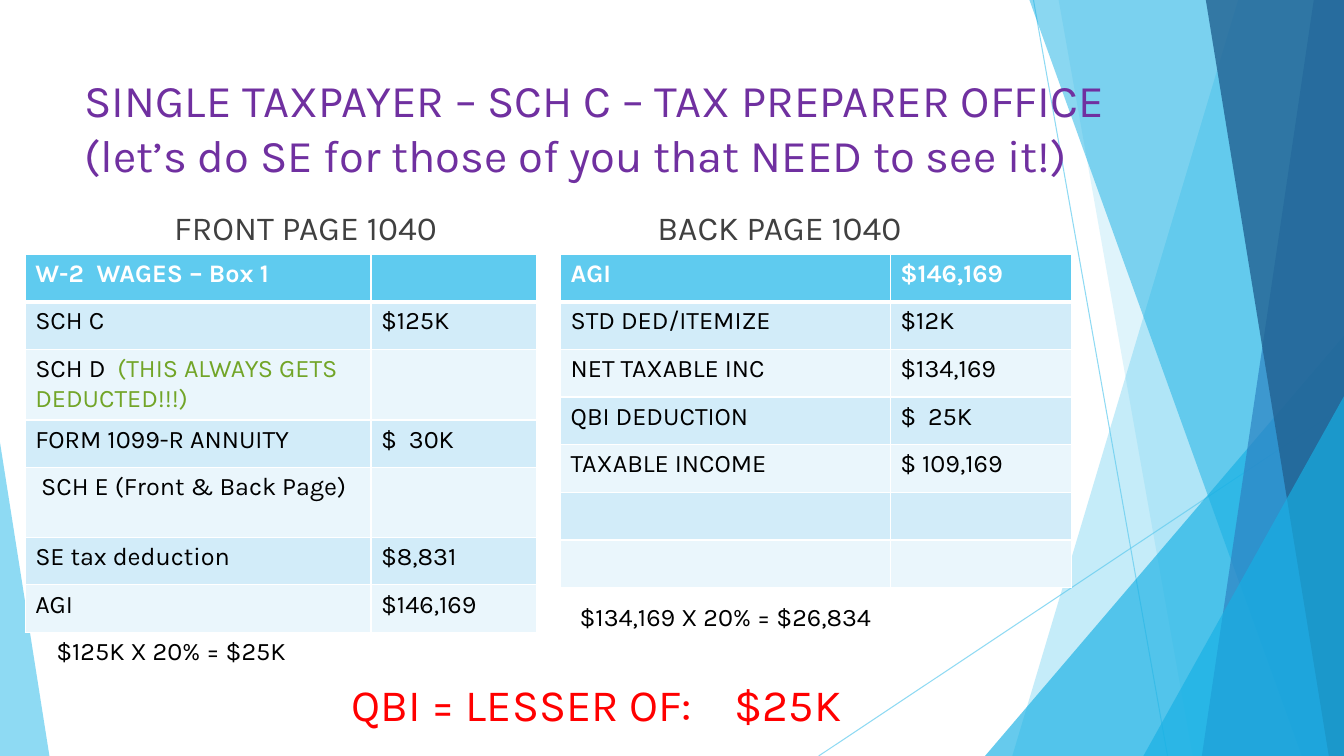
from dataclasses import dataclass

from lxml.etree import SubElement
from pptx import Presentation
from pptx.dml.color import RGBColor
from pptx.enum.shapes import MSO_CONNECTOR, MSO_SHAPE
from pptx.enum.text import MSO_ANCHOR, PP_ALIGN
from pptx.oxml.ns import qn
from pptx.util import Inches, Pt


@dataclass(frozen=True)
class Theme:
    font: str = "Karla"
    sky: str = "5FCBEF"
    azure: str = "17B0E4"
    blue: str = "2E83C3"
    navy: str = "226292"
    band_dark: str = "D2ECF9"
    band_light: str = "EAF6FC"
    white: str = "FFFFFF"
    black: str = "000000"
    purple: str = "7030A0"
    gray: str = "404040"
    green: str = "72A528"
    red: str = "FF0000"
    title_size: float = 32.4
    result_size: float = 32
    heading_size: float = 24
    body_size: float = 18


THEME = Theme()
WIDTH, HEIGHT = 13.33, 7.5
ROW = 0.473
TALL_ROW = 0.69

FRONT_ROWS = [
    ("W-2  WAGES – Box 1", ""),
    ("SCH C", "$125K"),
    (("SCH D  ", "(THIS ALWAYS GETS DEDUCTED!!!)"), ""),
    ("FORM 1099-R ANNUITY", "$  30K"),
    (" SCH E (Front & Back Page)", ""),
    ("SE tax deduction", "$8,831"),
    ("AGI", "$146,169"),
]
BACK_ROWS = [
    ("AGI", "$146,169"),
    ("STD DED/ITEMIZE", "$12K"),
    ("NET TAXABLE INC", "$134,169"),
    ("QBI DEDUCTION", "$  25K"),
    ("TAXABLE INCOME", "$ 109,169"),
    ("", ""),
    ("", ""),
]


def rgb(color):
    return RGBColor.from_string(color)


def add_run(paragraph, text, *, size=THEME.body_size, color=THEME.black, bold=False):
    run = paragraph.add_run()
    run.text = text
    run.font.name = THEME.font
    run.font.size = Pt(size)
    run.font.bold = bold
    run.font.color.rgb = rgb(color)


def add_text(slide, box, text, *, align=PP_ALIGN.LEFT, anchor=MSO_ANCHOR.TOP, **format):
    """Place text in a box; each line of the text is kept on its own line."""
    frame = slide.shapes.add_textbox(*map(Inches, box)).text_frame
    frame.word_wrap = True
    frame.vertical_anchor = anchor
    paragraph = frame.paragraphs[0]
    paragraph.alignment = align
    for index, line in enumerate(text.split("\n")):
        if index:
            paragraph.add_line_break()
        add_run(paragraph, line, **format)


def set_alpha(parent, percent):
    color = next(parent.iter(qn("a:srgbClr")))
    SubElement(color, qn("a:alpha"), val=str(percent * 1000))


def paint(shape, color, alpha):
    shape.shadow.inherit = False
    shape.line.fill.background()
    shape.fill.solid()
    shape.fill.fore_color.rgb = rgb(color)
    set_alpha(shape._element.spPr, alpha)


# Decoration: thin lines and translucent facets
def add_decoration(slide):
    for ends in [(10.25, 0, 11.58, HEIGHT), (WIDTH, 4.03, 8.12, HEIGHT)]:
        line = slide.shapes.add_connector(MSO_CONNECTOR.STRAIGHT, *map(Inches, ends))
        line.line.color.rgb = rgb(THEME.sky)
        line.line.width = Pt(0.75)
        set_alpha(line._element.spPr, 70)
        SubElement(line._element.spPr, qn("a:effectLst"))

    add_facet(slide, 12.28, 10.04, THEME.sky, 36)
    add_facet(slide, 10.5, 11.83, THEME.sky, 20)
    add_triangle(slide, (9.77, 3.33, 3.56, 4.17), 1, THEME.azure, 66)
    add_facet(slide, 10.21, 12.91, THEME.azure, 50)
    add_facet(slide, 13.03, 11.92, THEME.blue, 70)
    add_facet(slide, 11.96, 13.18, THEME.navy, 80)
    add_triangle(slide, (11.34, 3.93, 1.99, 3.57), 1, THEME.azure, 66)
    add_triangle(slide, (0, 4.39, 0.49, 3.11), 0, THEME.sky, 70)


def add_facet(slide, top_x, bottom_x, color, alpha):
    """Fill from a slanted left edge to the right side of the slide."""
    builder = slide.shapes.build_freeform(Inches(top_x), 0)
    corners = [(WIDTH, 0), (WIDTH, HEIGHT), (bottom_x, HEIGHT)]
    builder.add_line_segments([(Inches(x), Inches(y)) for x, y in corners])
    paint(builder.convert_to_shape(), color, alpha)


def add_triangle(slide, box, apex, color, alpha):
    triangle = slide.shapes.add_shape(MSO_SHAPE.ISOSCELES_TRIANGLE, *map(Inches, box))
    triangle.adjustments[0] = apex
    paint(triangle, color, alpha)


# One page of the form: heading, table and the sum below it
def add_form_page(slide, box, heading, heading_left, rows, columns, tall_rows, total, total_box):
    left, top, width, height = box
    add_text(slide, (heading_left, top - 0.65, 4.58, 0.63), heading, align=PP_ALIGN.CENTER,
             anchor=MSO_ANCHOR.BOTTOM, size=THEME.heading_size, color=THEME.gray)

    frame = slide.shapes.add_table(len(rows), len(columns), *map(Inches, box))
    table = frame.table
    for column, column_width in zip(table.columns, columns):
        column.width = Inches(column_width)
    for index, values in enumerate(rows):
        table.rows[index].height = Inches(TALL_ROW if index in tall_rows else ROW)
        for cell, value in zip(table.rows[index].cells, values):
            fill_cell(cell, value, index)

    add_text(slide, total_box, total)


def fill_cell(cell, value, row):
    header = row == 0
    properties = cell._tc.get_or_add_tcPr()
    for side in "LRTB":
        thick = (header and side == "B") or (row == 1 and side == "T")
        border = SubElement(properties, qn(f"a:ln{side}"), w=str(Pt(3 if thick else 1)))
        SubElement(SubElement(border, qn("a:solidFill")), qn("a:srgbClr"), val=THEME.white)
    cell.fill.solid()
    band = THEME.band_dark if row % 2 else THEME.band_light
    cell.fill.fore_color.rgb = rgb(THEME.sky if header else band)

    paragraph = cell.text_frame.paragraphs[0]
    paragraph.font.size = Pt(THEME.body_size)
    text, remark = value if isinstance(value, tuple) else (value, "")
    if text:
        add_run(paragraph, text, color=THEME.white if header else THEME.black, bold=header)
    if remark:
        add_run(paragraph, remark, color=THEME.green)


def build_slide(presentation):
    slide = presentation.slides.add_slide(presentation.slide_layouts[6])
    add_decoration(slide)
    add_text(slide, (0.74, 0.67, 11.12, 1.11),
             "SINGLE TAXPAYER – SCH C – TAX PREPARER OFFICE\n"
             "(let’s do SE for those of you that NEED to see it!)",
             size=THEME.title_size, color=THEME.purple)
    add_form_page(slide, (0.25, 2.52, 5.07, 3.74), "FRONT PAGE 1040", 0.74, FRONT_ROWS,
                  (3.43, 1.64), (2, 4), "$125K X 20% = $25K", (0.46, 6.25, 4.98, 0.4))
    add_form_page(slide, (5.56, 2.52, 5.07, 3.31), "BACK PAGE 1040", 5.44, BACK_ROWS,
                  (3.27, 1.8), (), "$134,169 X 20% = $26,834", (5.65, 5.92, 4.98, 0.4))
    add_text(slide, (2.38, 6.66, 7.08, 0.64), "QBI = LESSER OF:    $25K",
             align=PP_ALIGN.CENTER, size=THEME.result_size, color=THEME.red)


def main():
    presentation = Presentation()
    presentation.slide_width = Inches(WIDTH)
    presentation.slide_height = Inches(HEIGHT)
    build_slide(presentation)
    presentation.save("out.pptx")


if __name__ == "__main__":
    main()
